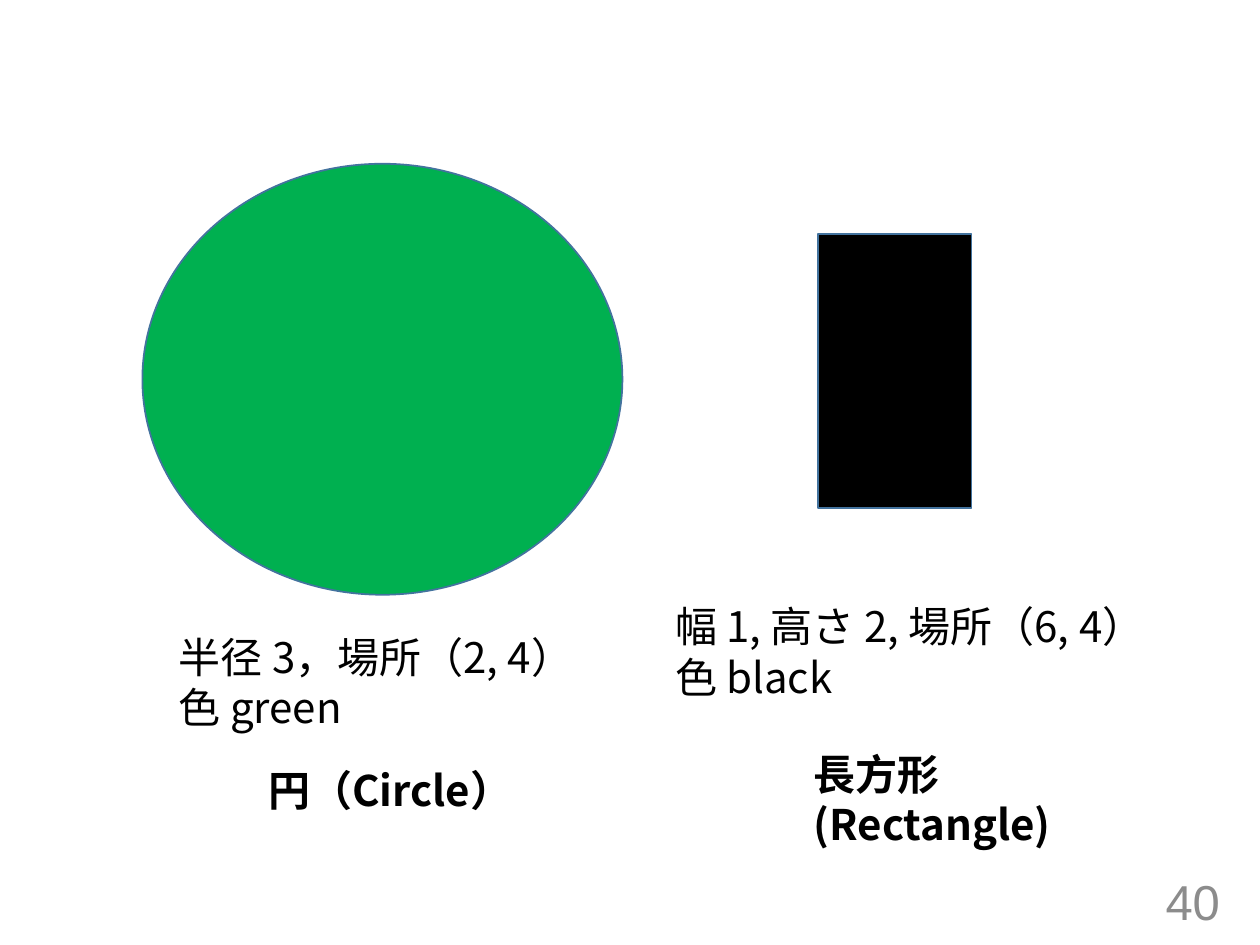
from lxml import etree
from pptx import Presentation
from pptx.dml.color import RGBColor
from pptx.enum.shapes import MSO_SHAPE
from pptx.enum.text import MSO_ANCHOR, PP_ALIGN
from pptx.oxml.ns import qn
from pptx.util import Inches, Pt

OVAL, RECTANGLE = MSO_SHAPE.OVAL, MSO_SHAPE.RECTANGLE
TOP, MIDDLE = MSO_ANCHOR.TOP, MSO_ANCHOR.MIDDLE
LEFT, RIGHT = PP_ALIGN.LEFT, PP_ALIGN.RIGHT
BLANK_LAYOUT = 6

COLORS = {"green": "00B050", "black": "000000", "outline": "43739E", "number": "8C8C8C"}
BODY_FONT, NUMBER_FONT = "Noto Sans CJK JP", "Arial"

# Each figure: shape, its description and its name; boxes are left, top, width, height
FIGURES = [
    {
        "kind": OVAL, "color": "green", "box": (1.13, 1.3, 3.81, 3.42),
        "description": ["半径 3，場所（2, 4）", "色 green"],
        "description_box": (1.32, 4.96, 4.8, 0.91),
        "name": "円（Circle）", "name_box": (2.03, 6.02, 2.71, 0.5),
    },
    {
        "kind": RECTANGLE, "color": "black", "box": (6.49, 1.86, 1.22, 2.17),
        "description": ["幅 1, 高さ 2, 場所（6, 4）", "色 black"],
        "description_box": (5.26, 4.72, 4.8, 0.91),
        "name": "長方形 (Rectangle)", "name_box": (6.36, 5.89, 2.71, 0.91),
    },
]
SLIDE_NUMBER, NUMBER_BOX = "40", (7.53, 6.95, 2.25, 0.4)


def to_inches(box):
    return [Inches(value) for value in box]


def add_figure(slide, kind, box, color):
    shape = slide.shapes.add_shape(kind, *to_inches(box))
    shape.shadow.inherit = False
    shape.fill.solid()
    shape.fill.fore_color.rgb = RGBColor.from_string(COLORS[color])
    shape.line.color.rgb = RGBColor.from_string(COLORS["outline"])
    shape.line.width = Pt(1)


def add_text(slide, box, lines, size=24, color="black", font_name=BODY_FONT,
             bold=False, align=LEFT, anchor=TOP):
    frame = slide.shapes.add_textbox(*to_inches(box)).text_frame
    frame.word_wrap = True
    frame.vertical_anchor = anchor
    frame.text = "\n".join(lines)
    for paragraph in frame.paragraphs:
        paragraph.alignment = align
        font = paragraph.font
        font.size, font.bold, font.name = Pt(size), bold, font_name
        font.color.rgb = RGBColor.from_string(COLORS[color])
        # East Asian characters take their own typeface entry
        properties = paragraph._p.pPr.find(qn("a:defRPr"))
        etree.SubElement(properties, qn("a:ea"), typeface=font_name)


def main():
    presentation = Presentation()
    presentation.slide_width, presentation.slide_height = Inches(10), Inches(7.5)
    slide = presentation.slides.add_slide(presentation.slide_layouts[BLANK_LAYOUT])

    # Figures with their captions
    for figure in FIGURES:
        add_figure(slide, figure["kind"], figure["box"], figure["color"])
        add_text(slide, figure["description_box"], figure["description"])
        add_text(slide, figure["name_box"], [figure["name"]], bold=True)

    # Slide number
    add_text(slide, NUMBER_BOX, [SLIDE_NUMBER], size=28, color="number",
             font_name=NUMBER_FONT, align=RIGHT, anchor=MIDDLE)

    presentation.save("out.pptx")


if __name__ == "__main__":
    main()
